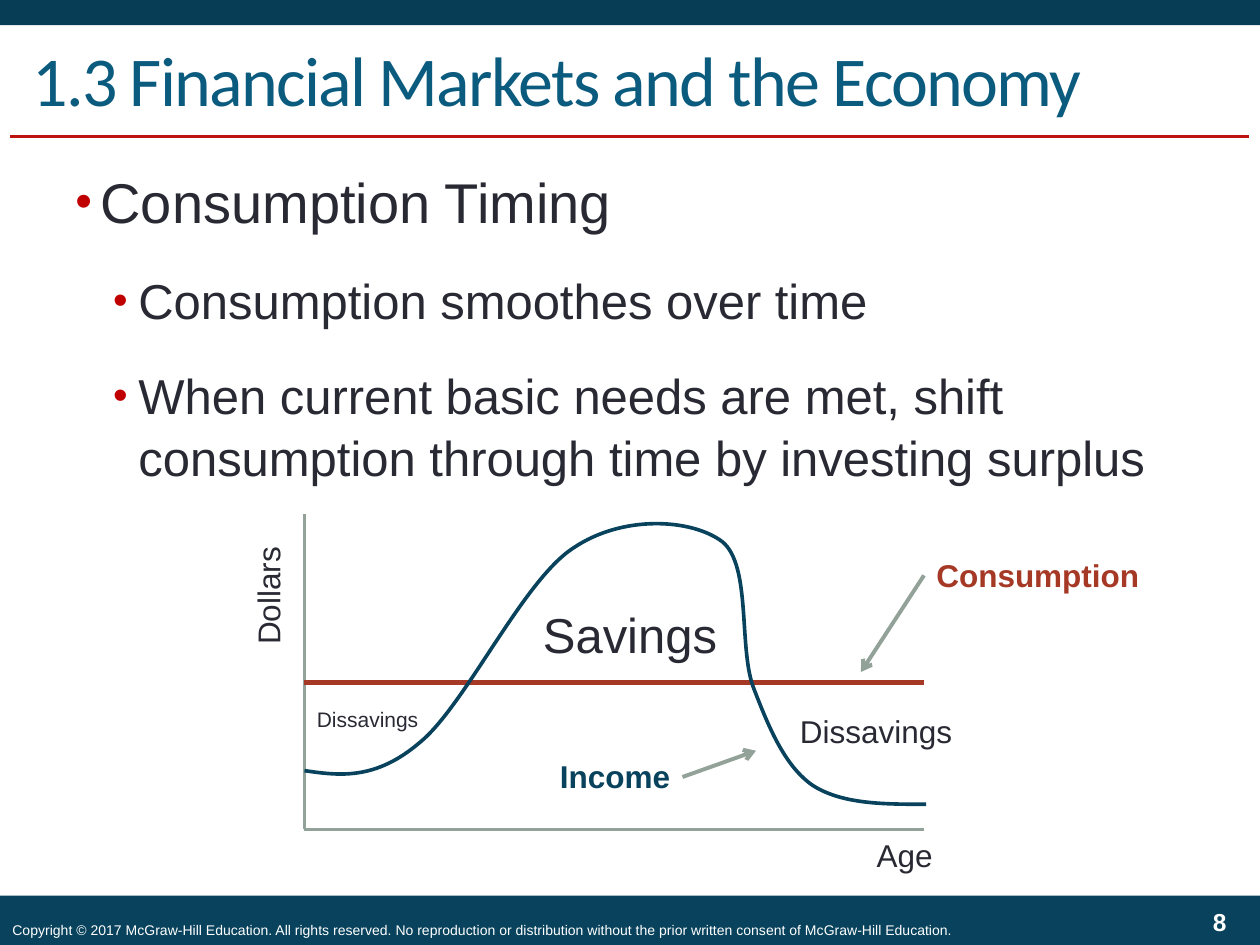
import pptx
import pptx.util
import pptx.dml.color
import pptx.enum.shapes
import pptx.enum.text
import pptx.oxml
import pptx.oxml.ns

RGBColor = pptx.dml.color.RGBColor
Align = pptx.enum.text.PP_ALIGN
Anchor = pptx.enum.text.MSO_ANCHOR
AutoSize = pptx.enum.text.MSO_AUTO_SIZE
ShapeType = pptx.enum.shapes.MSO_SHAPE
Pt = pptx.util.Pt
qn = pptx.oxml.ns.qn

DEEP_TEAL = RGBColor(0x07, 0x3D, 0x55)
TEAL = RGBColor(0x08, 0x42, 0x5C)
TITLE_BLUE = RGBColor(0x0B, 0x5B, 0x7F)
RULE_RED = RGBColor(0xBD, 0x13, 0x0F)
BULLET_RED = RGBColor(0xC0, 0x00, 0x00)
BRICK = RGBColor(0xA5, 0x39, 0x26)
SAGE = RGBColor(0x93, 0xA2, 0x99)
INK = RGBColor(0x29, 0x29, 0x34)
WHITE = RGBColor(0xFF, 0xFF, 0xFF)

COLUMNS, ROWS = 120, 90
CELL = pptx.util.Inches(10) / COLUMNS
AXIS_LEFT, AXIS_RIGHT, AXIS_TOP, AXIS_BOTTOM = 29, 88, 49, 79
CONSUMPTION_ROW = 65

INCOME_CURVE = [
    (29, 73.4),
    (32.4, 73.9), (35.8, 74.3), (40, 70.7),
    (44.3, 67.2), (49.8, 55.3), (54.6, 52.2),
    (59.3, 49), (65.9, 49.4), (68.8, 51.6),
    (71.6, 53.9), (70.3, 61.8), (71.8, 65.6),
    (73.3, 69.5), (74.8, 73), (77.4, 74.8),
    (80.2, 76.6), (84.2, 76.6), (88.2, 76.6),
]

BULLETS = [
    ("Consumption Timing", 0, 32, 0.2, 0),
    ("Consumption smoothes over time", 1, 28, 0.5, 4.9),
    ("When current basic needs are met, shift consumption through time "
     "by investing surplus", 1, 28, 0.5, 4.9),
]


def grid(*values):
    return [pptx.util.Emu(round(value * CELL)) for value in values]


def set_values(target, values):
    for name, value in values.items():
        setattr(target, name, value)


def add_xml(parent, tag, content="", **attributes):
    text = " ".join(f'{name}="{value}"' for name, value in attributes.items())
    namespace = pptx.oxml.ns.nsdecls("a")
    element = pptx.oxml.parse_xml(f"<a:{tag} {namespace} {text}>{content}</a:{tag}>")
    parent.append(element)
    return element


def write(paragraph, text, size, color, name="Arial", bold=False):
    run = paragraph.add_run()
    run.text = text
    set_values(run.font, {"size": Pt(size), "name": name, "bold": bold})
    run.font.color.rgb = color
    return run


def add_bar(slide, top, height, color):
    bar = slide.shapes.add_shape(ShapeType.RECTANGLE, *grid(0, top, COLUMNS, height))
    bar.shadow.inherit = False
    bar.fill.solid()
    bar.fill.fore_color.rgb = color
    bar.line.fill.background()


def add_line(slide, start, end, color, width=2.25, arrow=False):
    line = slide.shapes.add_connector(
        pptx.enum.shapes.MSO_CONNECTOR.STRAIGHT, *grid(*start, *end))
    line.line.color.rgb = color
    line.line.width = Pt(width)
    if arrow:
        add_xml(line.line._get_or_add_ln(), "tailEnd", type="arrow")
    add_xml(line._element.spPr, "effectLst")
    return line


def add_label(slide, text, place, size=18, color=INK, bold=False,
              align=Align.LEFT, anchor=Anchor.TOP, rotation=0):
    label = slide.shapes.add_textbox(*grid(*place))
    label.rotation = rotation
    set_values(label.text_frame, {"word_wrap": True, "vertical_anchor": anchor})
    paragraph = label.text_frame.paragraphs[0]
    paragraph.alignment = align
    write(paragraph, text, size, color, bold=bold)
    return label


def add_curve(slide, points, color, width):
    start, *rest = [tuple(grid(*point)) for point in points]
    builder = slide.shapes.build_freeform(*start)
    builder.add_line_segments(rest, close=False)
    curve = builder.convert_to_shape()
    outline = curve._element.find(".//" + qn("a:path"))
    segments = outline.findall(qn("a:lnTo"))
    for first in range(0, len(segments), 3):
        bezier = add_xml(outline, "cubicBezTo")
        for segment in segments[first:first + 3]:
            bezier.append(segment[0])
            outline.remove(segment)
    curve.shadow.inherit = False
    curve.fill.background()
    curve.line.color.rgb = color
    curve.line.width = Pt(width)


def format_title(slide):
    title = slide.shapes.title
    left, top, width, height = grid(1.9, 2, 116.2, 11)
    set_values(title, {"left": left, "top": top, "width": width, "height": height})
    set_values(title.text_frame, {"vertical_anchor": Anchor.MIDDLE, "word_wrap": True,
                                  "auto_size": AutoSize.NONE})
    paragraph = title.text_frame.paragraphs[0]
    paragraph.alignment = Align.LEFT
    tabs = add_xml(paragraph._p.get_or_add_pPr(), "tabLst")
    for number in range(1, 9):
        add_xml(tabs, "tab", pos=round(number * pptx.util.Inches(0.79)), algn="l")
    run = write(paragraph, "1.3 Financial Markets and the Economy", 40,
                TITLE_BLUE, "Calibri")
    run.font._element.set("spc", "-100")


def add_bullets(slide):
    frame = slide.shapes.add_textbox(*grid(6, 15, 108, 64)).text_frame
    frame.word_wrap = True
    for index, (text, level, size, indent, before) in enumerate(BULLETS):
        paragraph = frame.add_paragraph() if index else frame.paragraphs[0]
        set_values(paragraph, {"level": level, "line_spacing": 1.05,
                               "space_before": Pt(before), "space_after": Pt(14.2)})
        properties = paragraph._p.get_or_add_pPr()
        properties.set("marL", str(pptx.util.Inches(indent)))
        properties.set("indent", str(pptx.util.Inches(-0.2)))
        add_xml(properties, "buClr", f'<a:srgbClr val="{BULLET_RED}"/>')
        add_xml(properties, "buSzPct", val=85000)
        add_xml(properties, "buFont", typeface="Arial")
        add_xml(properties, "buChar", char="•")
        write(paragraph, text, size, INK)


def add_frame(slide):
    add_bar(slide, 0, 2.4, DEEP_TEAL)
    add_line(slide, (1, 13), (119, 13), RULE_RED)
    add_bar(slide, 85.3, ROWS - 85.3, TEAL)
    add_label(slide, "8", (104, 85.6, 14, 4.3), 14, WHITE, True,
              Align.RIGHT, Anchor.MIDDLE)
    add_label(slide, "Copyright © 2017 McGraw-Hill Education. All rights reserved. "
              "No reproduction or distribution without the prior written consent "
              "of McGraw-Hill Education.", (0, 86.6, COLUMNS, 3.4), 8, WHITE,
              anchor=Anchor.BOTTOM)


def add_diagram(slide):
    origin = (AXIS_LEFT, AXIS_BOTTOM)
    add_line(slide, (AXIS_LEFT, AXIS_TOP), origin, SAGE)
    add_line(slide, (AXIS_RIGHT, AXIS_BOTTOM), origin, SAGE)
    add_line(slide, (AXIS_LEFT, CONSUMPTION_ROW), (AXIS_RIGHT, CONSUMPTION_ROW),
             BRICK, 2.5)
    consumption = add_label(slide, "Consumption", (AXIS_RIGHT, 52.4, 23, 4.8),
                            color=BRICK, bold=True)
    arrow = add_line(slide, (AXIS_RIGHT, 54.8), (82, 64), SAGE, arrow=True)
    arrow.begin_connect(consumption, 1)
    add_curve(slide, INCOME_CURVE, TEAL, 2.08)
    income = add_label(slide, "Income", (43, 71.5, 22, 5), color=TEAL, bold=True,
                       align=Align.RIGHT)
    arrow = add_line(slide, (65, 74), (72, 71.5), SAGE, arrow=True)
    arrow.begin_connect(income, 3)
    add_label(slide, "Savings", (50, 57, 20, 6.8), 28, align=Align.CENTER)
    add_label(slide, "Dissavings", (75, 67.2, 17, 4.8))
    add_label(slide, "Dissavings", (AXIS_LEFT, 66.7, 14, 3.6), 12)
    add_label(slide, "Age", (75, AXIS_BOTTOM, 15, 4.8), align=Align.RIGHT)
    add_label(slide, "Dollars", (18, 52.7, 15, 4.8), rotation=270)


def main():
    presentation = pptx.Presentation()
    width, height = grid(COLUMNS, ROWS)
    set_values(presentation, {"slide_width": width, "slide_height": height})
    slide = presentation.slides.add_slide(presentation.slide_layouts[5])
    add_frame(slide)
    add_bullets(slide)
    format_title(slide)
    add_diagram(slide)
    presentation.save("out.pptx")


if __name__ == "__main__":
    main()
